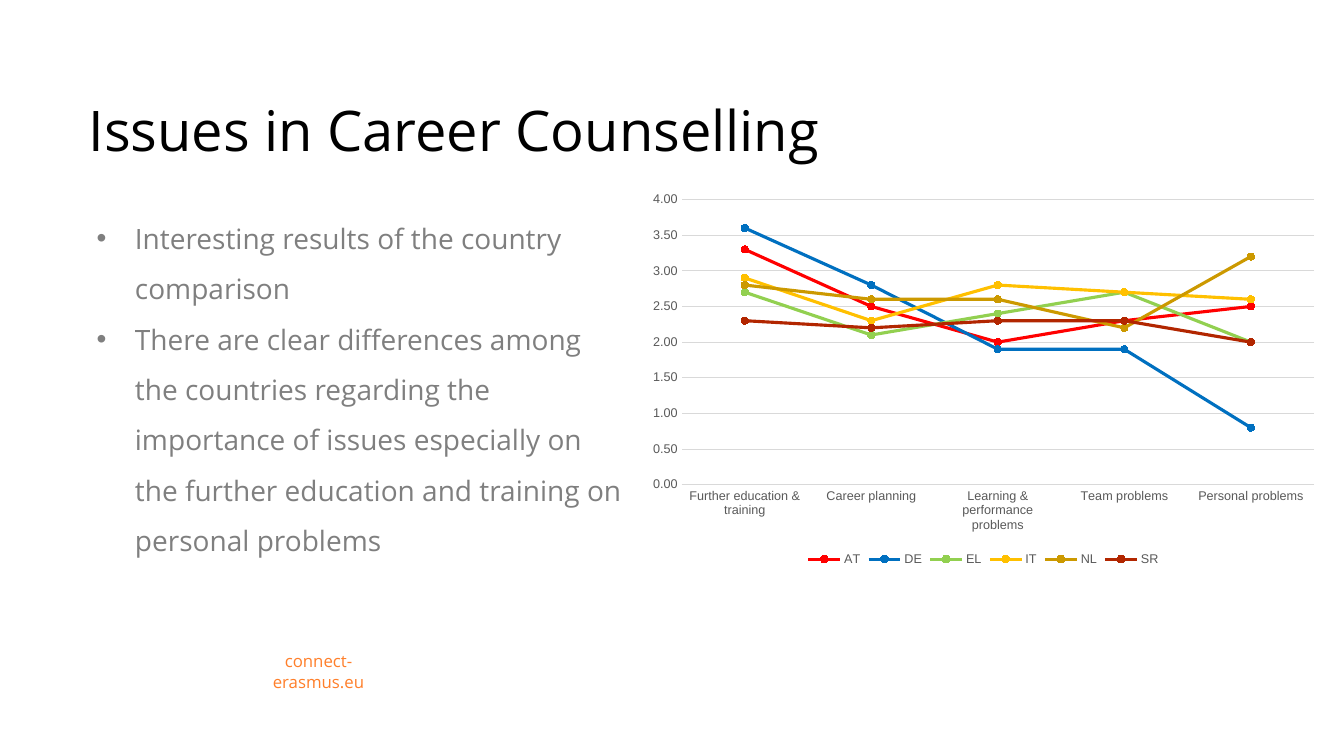
from lxml import etree
from pptx import Presentation
from pptx.chart.data import CategoryChartData
from pptx.dml.color import RGBColor
from pptx.enum.chart import XL_CHART_TYPE, XL_LEGEND_POSITION, XL_MARKER_STYLE, XL_TICK_MARK
from pptx.enum.text import MSO_ANCHOR, PP_ALIGN
from pptx.oxml.ns import qn
from pptx.util import Inches, Pt

THEME = {
    "text_font": "Open Sans", "chart_font": "Arial",
    "title": "000000", "body": "7F7F7F", "site": "FF7F2A",
    "label": "595959", "grid": "D9D9D9",
    "title_size": 40, "body_size": 20, "site_size": 12,
    "chart_size": 10, "label_size": 9,
    "series_width": 2.25, "grid_width": 0.75, "marker_size": 5,
}

TITLE = "Issues in Career Counselling"
FINDINGS = [
    "Interesting results of the country comparison",
    "There are clear differences among the countries regarding the importance "
    "of issues especially on the further education and training on personal problems",
]
SITE = "connect-erasmus.eu"
ISSUES = ["Further education & training", "Career planning",
          "Learning & performance problems", "Team problems", "Personal problems"]
COUNTRIES = {
    "AT": ("FF0000", (3.3, 2.5, 2.0, 2.3, 2.5)),
    "DE": ("0070C0", (3.6, 2.8, 1.9, 1.9, 0.8)),
    "EL": ("92D050", (2.7, 2.1, 2.4, 2.7, 2.0)),
    "IT": ("FFC000", (2.9, 2.3, 2.8, 2.7, 2.6)),
    "NL": ("CC9900", (2.8, 2.6, 2.6, 2.2, 3.2)),
    "SR": ("B22600", (2.3, 2.2, 2.3, 2.3, 2.0)),
}
PLACES = {
    "title": (0.78, 0.07, 11.69, 1.6),
    "body": (0.86, 1.98, 5.48, 4.45),
    "site": (2.28, 6.51, 1.76, 0.3),
    "chart": (6.34, 1.83, 6.83, 3.83),
}
BULLET_INDENT = 0.38


def place(part):
    return [Inches(length) for length in PLACES[part]]


def apply(target, values):
    for name, value in values.items():
        setattr(target, name, value)


def style_font(font, face, size, color):
    apply(font, {"name": THEME[face], "size": Pt(THEME[size])})
    font.color.rgb = RGBColor.from_string(THEME[color])


def style_line(line, color, width):
    line.color.rgb = RGBColor.from_string(color)
    line.width = Pt(THEME[width])


def add_bullet(paragraph):
    properties = paragraph._p.get_or_add_pPr()
    indent = Inches(BULLET_INDENT)
    properties.set("marL", str(indent))
    properties.set("indent", str(-indent))
    etree.SubElement(properties, qn("a:buFont")).set("typeface", "Arial")
    etree.SubElement(properties, qn("a:buChar")).set("char", "•")


def add_text(slide, part, lines, anchor, paragraph_format, bulleted=False):
    frame = slide.shapes.add_textbox(*place(part)).text_frame
    apply(frame, {"word_wrap": True, "vertical_anchor": anchor})
    for index, line in enumerate(lines):
        paragraph = frame.add_paragraph() if index else frame.paragraphs[0]
        paragraph.text = line
        if bulleted:
            add_bullet(paragraph)
        apply(paragraph, paragraph_format)
        style_font(paragraph.runs[0].font, "text_font", f"{part}_size", part)


def add_country_chart(slide):
    ratings = CategoryChartData(number_format="0.0")
    ratings.categories = ISSUES
    for country, (_, values) in COUNTRIES.items():
        ratings.add_series(country, values)
    chart = slide.shapes.add_chart(
        XL_CHART_TYPE.LINE_MARKERS, *place("chart"), ratings).chart
    apply(chart, {"has_title": False, "has_legend": True})
    style_font(chart.font, "chart_font", "chart_size", "title")
    apply(chart.legend, {"position": XL_LEGEND_POSITION.BOTTOM, "include_in_layout": False})
    style_font(chart.legend.font, "chart_font", "label_size", "label")

    issue_axis, rating_axis = chart.category_axis, chart.value_axis
    for axis in (issue_axis, rating_axis):
        apply(axis, {"major_tick_mark": XL_TICK_MARK.NONE,
                     "minor_tick_mark": XL_TICK_MARK.NONE})
        style_font(axis.tick_labels.font, "chart_font", "label_size", "label")
    style_line(issue_axis.format.line, THEME["grid"], "grid_width")
    apply(rating_axis, {"minimum_scale": 0, "maximum_scale": 4, "major_unit": 0.5,
                        "has_major_gridlines": True})
    rating_axis.format.line.fill.background()
    style_line(rating_axis.major_gridlines.format.line, THEME["grid"], "grid_width")
    apply(rating_axis.tick_labels, {"number_format": "###0.00",
                                    "number_format_is_linked": False})

    plot = chart.plots[0]
    plot.vary_by_categories = False
    for series, (color, _) in zip(plot.series, COUNTRIES.values()):
        series.smooth = False
        style_line(series.format.line, color, "series_width")
        marker = series.marker
        apply(marker, {"style": XL_MARKER_STYLE.CIRCLE, "size": THEME["marker_size"]})
        marker.format.fill.solid()
        marker.format.fill.fore_color.rgb = RGBColor.from_string(color)
        style_line(marker.format.line, color, "grid_width")


def main():
    presentation = Presentation()
    apply(presentation, {"slide_width": Inches(13.33), "slide_height": Inches(7.5)})
    slide = presentation.slides.add_slide(presentation.slide_layouts[6])
    add_text(slide, "title", [TITLE], MSO_ANCHOR.BOTTOM, {"line_spacing": 0.9})
    add_text(slide, "body", FINDINGS, MSO_ANCHOR.TOP, {"line_spacing": 1.5}, bulleted=True)
    add_text(slide, "site", [SITE], MSO_ANCHOR.MIDDLE, {"alignment": PP_ALIGN.CENTER})
    add_country_chart(slide)
    presentation.save("out.pptx")


if __name__ == "__main__":
    main()
